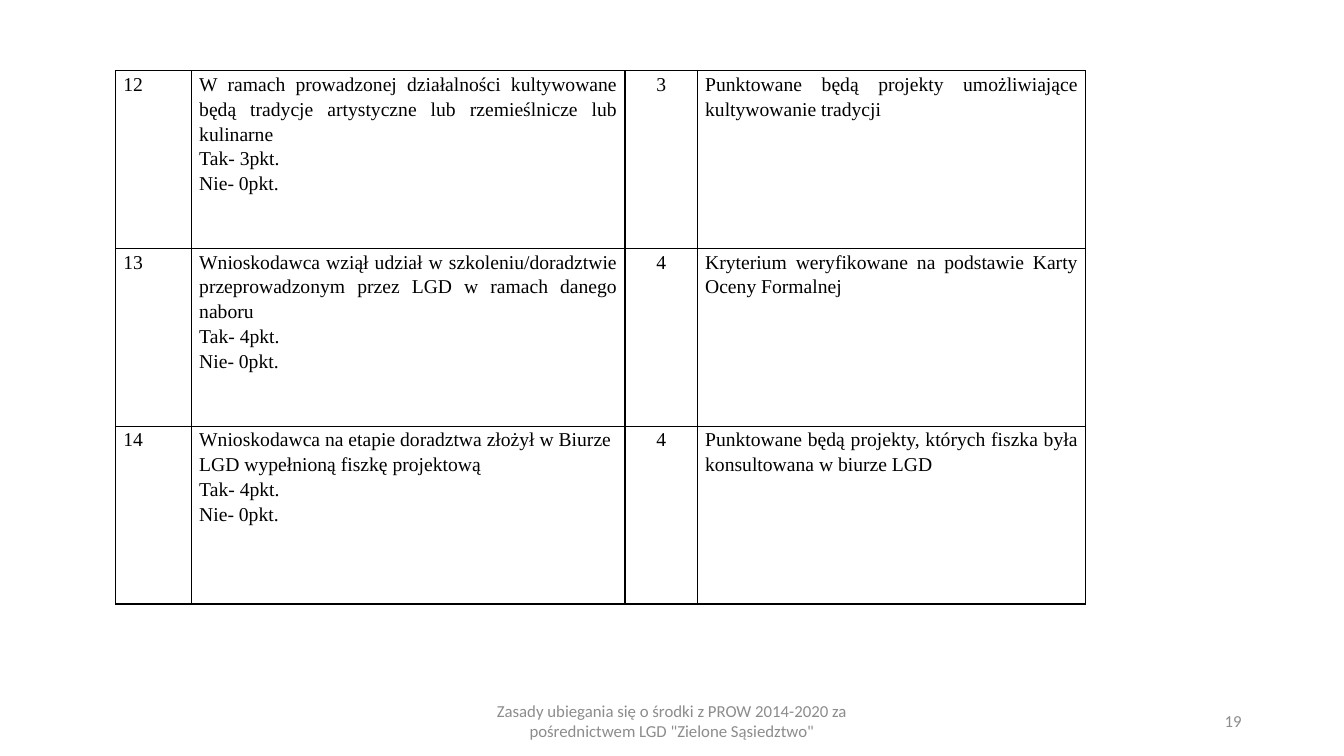
from typing import NamedTuple

from lxml import etree
from pptx import Presentation
from pptx.dml.color import RGBColor
from pptx.enum import text
from pptx.oxml import ns
from pptx.util import Cm, Pt

BLACK = RGBColor(0x00, 0x00, 0x00)
GREY = RGBColor(0x8C, 0x8C, 0x8C)
LEFT, CENTER = text.PP_ALIGN.LEFT, text.PP_ALIGN.CENTER
RIGHT, JUSTIFY = text.PP_ALIGN.RIGHT, text.PP_ALIGN.JUSTIFY


class Criterion(NamedTuple):
    number: int
    description: str
    points: int
    remark: str
    description_align: text.PP_ALIGN = JUSTIFY


class FooterItem(NamedTuple):
    wording: str
    left: float
    width: float
    align: text.PP_ALIGN


CRITERIA = [
    Criterion(12, "W ramach prowadzonej działalności kultywowane będą tradycje "
              "artystyczne lub rzemieślnicze lub kulinarne", 3,
              "Punktowane będą projekty umożliwiające kultywowanie tradycji"),
    Criterion(13, "Wnioskodawca wziął udział w szkoleniu/doradztwie "
              "przeprowadzonym przez LGD w ramach danego naboru", 4,
              "Kryterium weryfikowane na podstawie Karty Oceny Formalnej"),
    Criterion(14, "Wnioskodawca na etapie doradztwa złożył w Biurze LGD "
              "wypełnioną fiszkę projektową", 4,
              "Punktowane będą projekty, których fiszka była konsultowana "
              "w biurze LGD", LEFT),
]
FOOTER = [
    FooterItem('Zasady ubiegania się o środki z PROW 2014-2020 za '
               'pośrednictwem LGD "Zielone Sąsiedztwo"', 11.22, 11.43, CENTER),
    FooterItem("19", 23.92, 7.62, RIGHT),
]
COLUMN_WIDTHS = [1.91, 10.92, 1.83, 9.78]
ROW_HEIGHT = 4.48


def add_borders(cell) -> None:
    properties = cell._tc.get_or_add_tcPr()
    for side in ("a:lnL", "a:lnR", "a:lnT", "a:lnB"):
        line = etree.SubElement(properties, ns.qn(side), w=str(Pt(1)))
        fill = etree.SubElement(line, ns.qn("a:solidFill"))
        etree.SubElement(fill, ns.qn("a:srgbClr"), val=str(BLACK))


def fill_cell(cell, wording: str, aligns: list) -> None:
    add_borders(cell)
    cell.fill.background()
    cell.margin_left = cell.margin_right = Cm(0.19)
    cell.margin_top = cell.margin_bottom = 0
    cell.text_frame.text = wording
    for paragraph, align in zip(cell.text_frame.paragraphs, aligns):
        paragraph.alignment = align
        paragraph.line_spacing = 1.15
        font = paragraph.runs[0].font
        font.name, font.size = "Times New Roman", Pt(14)
        font.color.rgb = BLACK


def add_criteria(slide, criteria: list) -> None:
    table = slide.shapes.add_table(
        len(criteria), len(COLUMN_WIDTHS), Cm(2.92), Cm(1.78),
        Cm(sum(COLUMN_WIDTHS)), Cm(ROW_HEIGHT * len(criteria))).table
    table.first_row = table.horz_banding = False
    for column, width in zip(table.columns, COLUMN_WIDTHS):
        column.width = Cm(width)
    for row, criterion in zip(table.rows, criteria):
        row.height = Cm(ROW_HEIGHT)
        number, description, points, remark = row.cells
        scoring = f"Tak- {criterion.points}pkt.\nNie- 0pkt."
        fill_cell(number, str(criterion.number), [LEFT])
        fill_cell(description, f"{criterion.description}\n{scoring}",
                  [criterion.description_align, JUSTIFY, JUSTIFY])
        fill_cell(points, str(criterion.points), [CENTER])
        fill_cell(remark, criterion.remark, [JUSTIFY])


def add_footer_item(slide, item: FooterItem) -> None:
    frame = slide.shapes.add_textbox(
        Cm(item.left), Cm(17.65), Cm(item.width), Cm(1.02)).text_frame
    frame.word_wrap = True
    frame.vertical_anchor = text.MSO_ANCHOR.MIDDLE
    frame.text = item.wording
    paragraph = frame.paragraphs[0]
    paragraph.alignment = item.align
    font = paragraph.runs[0].font
    font.name, font.size = "Calibri", Pt(12)
    font.color.rgb = GREY


def main() -> None:
    presentation = Presentation()
    presentation.slide_width, presentation.slide_height = Cm(33.87), Cm(19.05)
    slide = presentation.slides.add_slide(presentation.slide_layouts[6])

    # Footer and slide number
    for item in FOOTER:
        add_footer_item(slide, item)

    # Table of selection criteria
    add_criteria(slide, CRITERIA)

    presentation.save("out.pptx")


if __name__ == "__main__":
    main()
